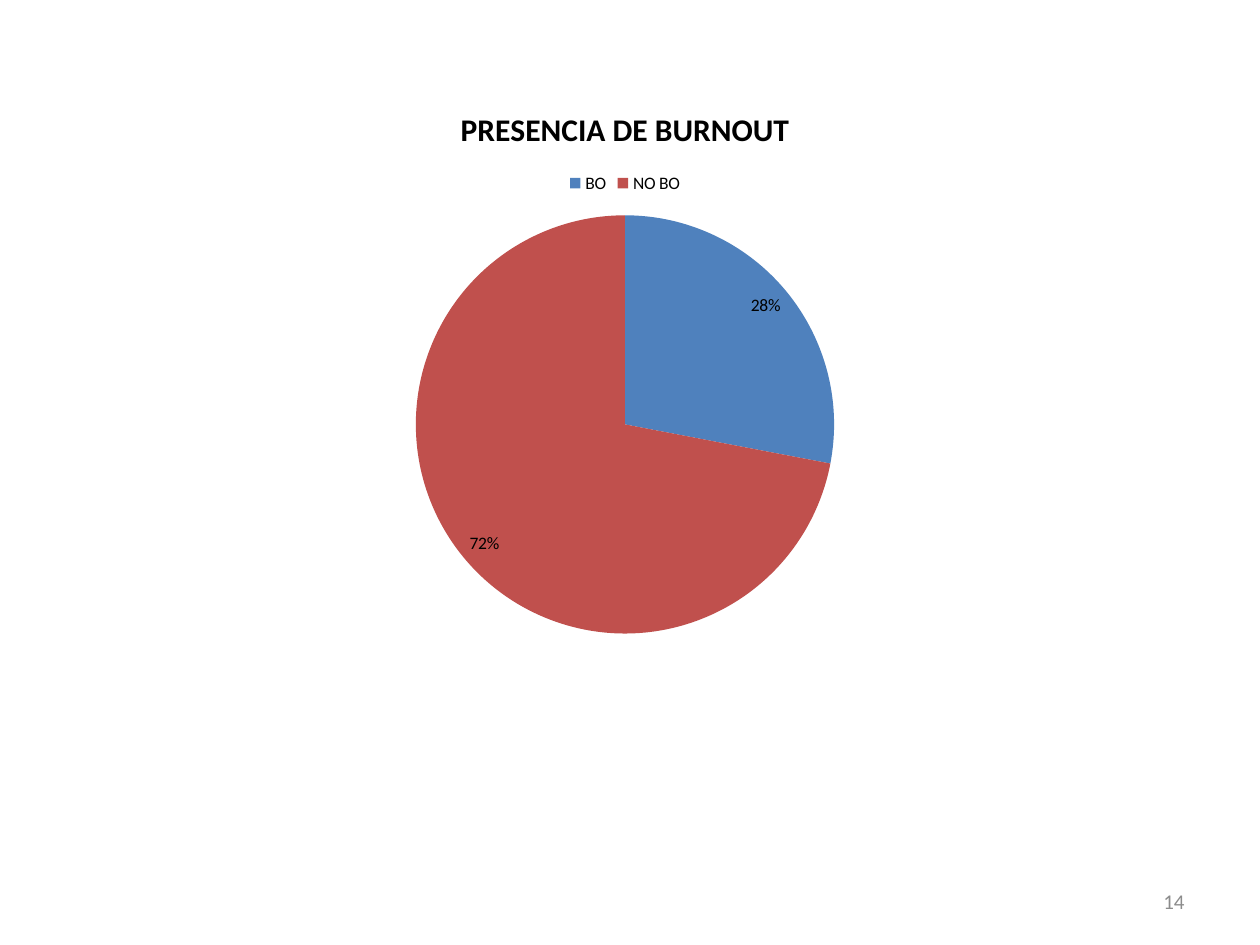
from dataclasses import dataclass

from pptx import Presentation
from pptx import util as u
from pptx.chart.data import CategoryChartData
from pptx.dml.color import RGBColor
from pptx.enum import chart as ch, text

PX = 914400 // 126  # EMU in one px
FONT = "Calibri"


@dataclass
class Box:
    x: int
    y: int
    w: int
    h: int

    def emu(self) -> tuple[int, ...]:
        return tuple(v * PX for v in (self.x, self.y, self.w, self.h))


@dataclass
class Slice:
    name: str
    share: int
    fill: str


def style(font, size: int, color: str, bold: bool = False) -> None:
    font.name, font.size, font.bold = FONT, u.Pt(size), bold
    font.color.rgb = RGBColor.from_string(color)


def add_pie(slide, box: Box, title: str, slices: list[Slice]) -> None:
    data = CategoryChartData()
    data.categories = [s.name for s in slices]
    data.add_series("Series 1", [s.share for s in slices])
    chart = slide.shapes.add_chart(ch.XL_CHART_TYPE.PIE, *box.emu(), data).chart
    style(chart.font, 10, "000000")

    # Title and legend
    chart.has_title = True
    run = chart.chart_title.text_frame.paragraphs[0].add_run()
    run.text = title
    style(run.font, 18, "000000", bold=True)
    chart.has_legend = True
    chart.legend.position = ch.XL_LEGEND_POSITION.TOP
    chart.legend.include_in_layout = False

    # Slices and their labels
    plot = chart.plots[0]
    plot.vary_by_categories = True
    for i, part in enumerate(slices):
        fill = plot.series[0].points[i].format.fill
        fill.solid()
        fill.fore_color.rgb = RGBColor.from_string(part.fill)
    plot.has_data_labels = True
    labels = plot.data_labels
    labels.show_value = False
    labels.show_percentage = True
    labels.number_format = "0%"
    labels.number_format_is_linked = False
    labels.position = ch.XL_LABEL_POSITION.INSIDE_END
    style(labels.font, 10, "000000")


def add_number(slide, box: Box, num: str) -> None:
    frame = slide.shapes.add_textbox(*box.emu()).text_frame
    frame.word_wrap = True
    frame.vertical_anchor = text.MSO_ANCHOR.MIDDLE
    para = frame.paragraphs[0]
    para.alignment = text.PP_ALIGN.RIGHT
    run = para.add_run()
    run.text = num
    style(run.font, 12, "8C8C8C")


def main() -> None:
    prs = Presentation()
    prs.slide_width, prs.slide_height = u.Inches(10), u.Inches(7.5)
    slide = prs.slides.add_slide(prs.slide_layouts[6])

    add_number(slide, Box(903, 876, 294, 50), "14")
    add_pie(slide, Box(247, 84, 756, 567), "PRESENCIA DE BURNOUT", [
        Slice("BO", 28, "4F81BD"),
        Slice("NO BO", 72, "C0504D"),
    ])
    prs.save("out.pptx")


if __name__ == "__main__":
    main()
